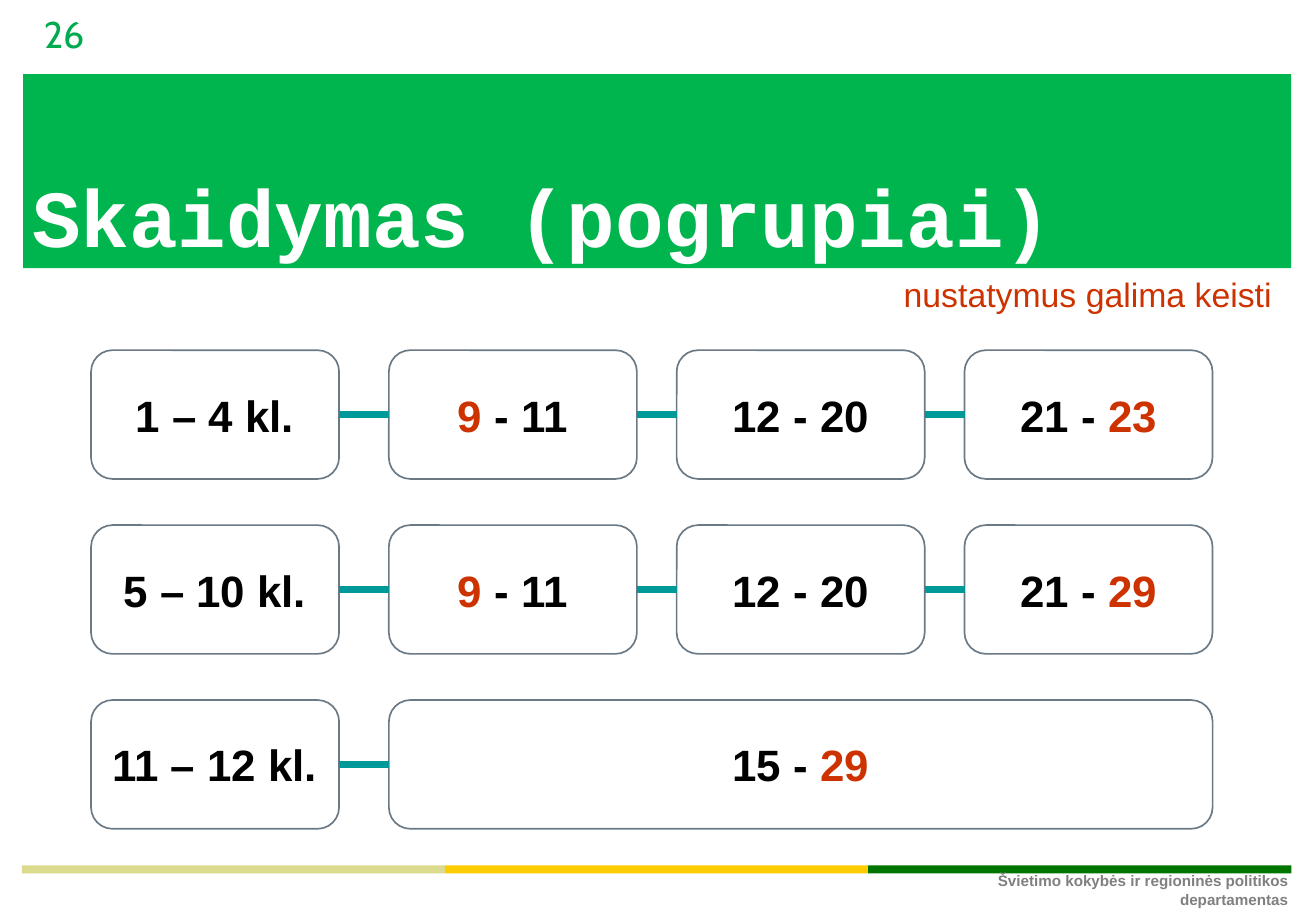
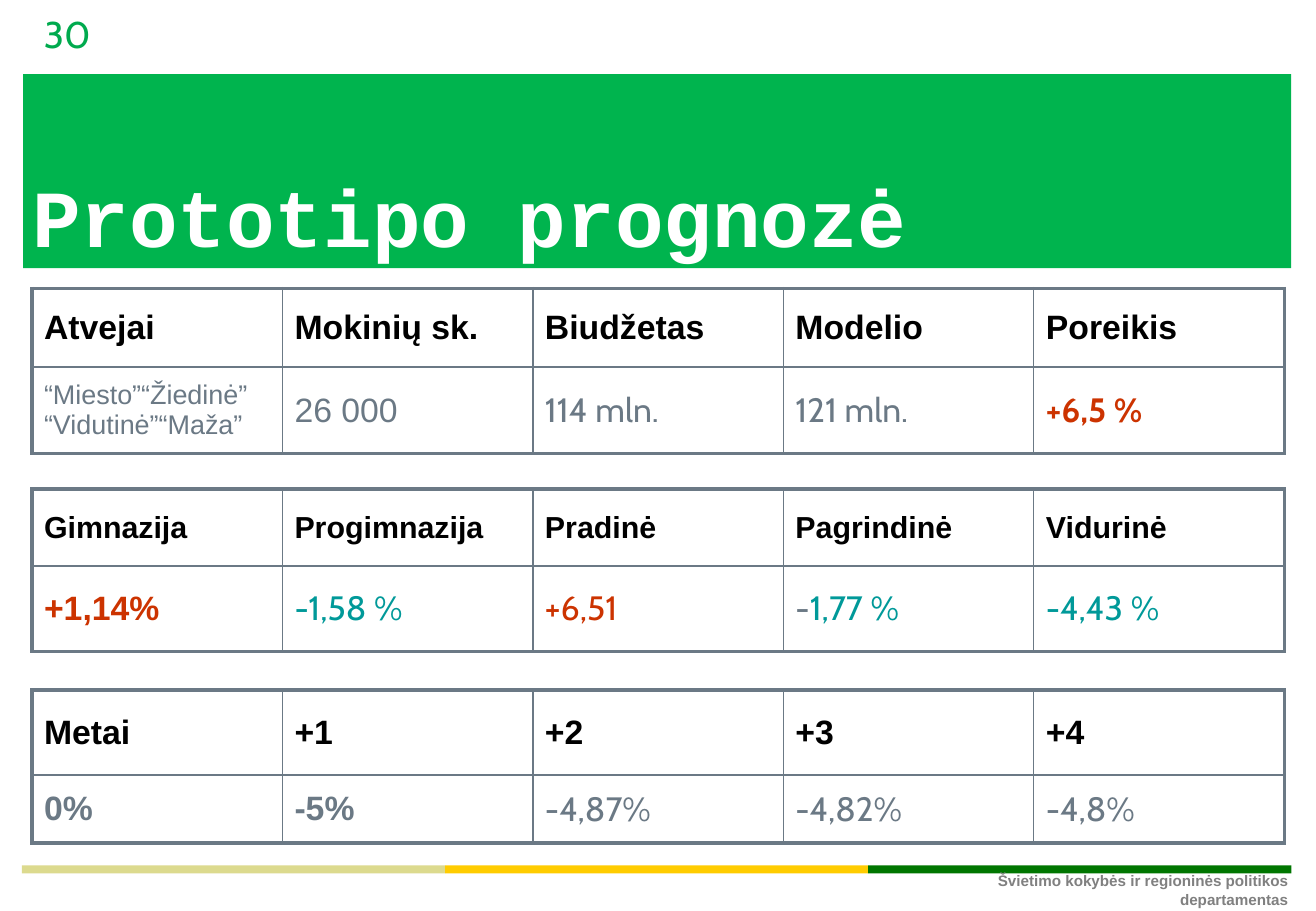
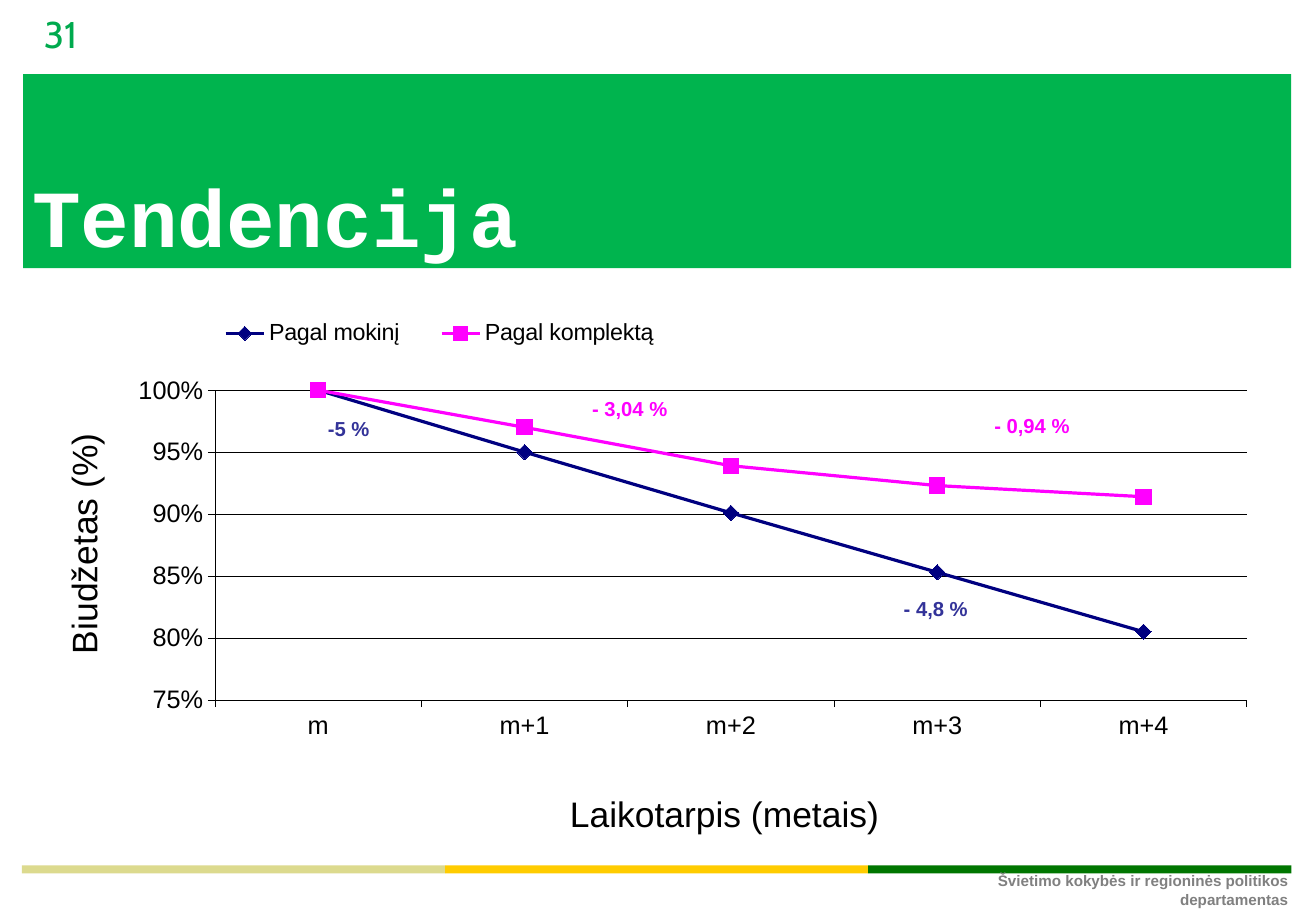
import pptx
import pptx.chart.data
import pptx.dml.color
import pptx.enum.chart
import pptx.enum.shapes
import pptx.enum.text
import pptx.oxml
import pptx.oxml.ns
import pptx.util

Pt = pptx.util.Pt
qn = pptx.oxml.ns.qn
ALIGN = pptx.enum.text.PP_ALIGN
ANCHOR = pptx.enum.text.MSO_ANCHOR
SHAPE = pptx.enum.shapes.MSO_SHAPE

COLORS = {
    "band": "00B44E", "number": "00AA4E", "sand": "DCDA8E", "gold": "FFCC00",
    "forest": "007600", "footer": "808080", "white": "FFFFFF", "black": "000000",
    "slate": "6B7985", "red": "CC3300", "teal": "009999", "navy": "000080",
    "indigo": "333399", "magenta": "FF00FF",
}
INSETS = (7.2, 3.6, 7.2, 3.6)


def rgb(name):
    return pptx.dml.color.RGBColor.from_string(COLORS[name])


def box(left, top, width, height):
    return Pt(left), Pt(top), Pt(width), Pt(height)


def set_font(font, size, color="black", name="Arial", bold=False):
    font.size = Pt(size)
    font.name = name
    font.bold = bold
    font.color.rgb = rgb(color)


def write(tf, text, size=20, color="black", name="Arial", bold=False,
          align=ALIGN.LEFT, anchor=ANCHOR.MIDDLE, insets=INSETS, wrap=True):
    tf.word_wrap = wrap
    tf.vertical_anchor = anchor
    tf.margin_left, tf.margin_top, tf.margin_right, tf.margin_bottom = map(Pt, insets)
    p = tf.paragraphs[0]
    p.alignment = align
    for part, part_color in [(text, color)] if isinstance(text, str) else text:
        r = p.add_run()
        r.text = part
        set_font(r.font, size, part_color, name, bold)


def add_text(s, place, text, **fmt):
    sp = s.shapes.add_textbox(*box(*place))
    write(sp.text_frame, text, **fmt)
    return sp


def add_bar(s, place, color):
    sp = s.shapes.add_shape(SHAPE.RECTANGLE, *box(*place))
    sp.shadow.inherit = False
    sp.fill.solid()
    sp.fill.fore_color.rgb = rgb(color)
    sp.line.fill.background()
    return sp


def build_layout(s):
    layout = s.slide_layout
    title = layout.placeholders[0]
    title.left, title.top, title.width, title.height = box(19, 46.6, 742, 109.5)
    shared = [add_bar(s, (13.7, 43.9, 751.7, 115), "band")]
    for i, color in enumerate(("sand", "gold", "forest")):
        shared.append(add_bar(s, (13 + 250.8 * i, 513, 250.8, 4.7), color))
    shared.append(add_text(
        s, (578, 513.6, 190.4, 26), "Švietimo kokybės ir regioninės politikos departamentas",
        size=9, color="footer", bold=True, align=ALIGN.RIGHT, anchor=ANCHOR.TOP,
        insets=(5, 3, 5, 3)))
    for i, sp in enumerate(shared):
        sp.element.nvSpPr.cNvPr.set("id", str(100 + i))
        layout.shapes.element.append(sp.element)


def start_slide(s, number, title):
    tf = s.shapes.title.text_frame
    write(tf, title, size=48, color="white", name="Courier New", bold=True,
          anchor=ANCHOR.BOTTOM, insets=(0, 0, 0, 0))
    tf.auto_size = pptx.enum.text.MSO_AUTO_SIZE.NONE
    add_text(s, (21, 8, 60, 24), number, size=22, color="number", name="Cabin",
             insets=(5, 3, 5, 3))


def add_card(s, place, text):
    sp = s.shapes.add_shape(SHAPE.ROUNDED_RECTANGLE, *box(*place))
    sp.shadow.inherit = False
    sp.fill.background()
    sp.line.color.rgb = rgb("slate")
    sp.line.width = Pt(1)
    write(sp.text_frame, text, size=26, bold=True, align=ALIGN.CENTER, wrap=False)


def add_link(s, start, end, y):
    cx = s.shapes.add_connector(pptx.enum.shapes.MSO_CONNECTOR.STRAIGHT,
                                Pt(start), Pt(y), Pt(end), Pt(y))
    cx.line.color.rgb = rgb("teal")
    cx.line.width = Pt(4)
    cx.element.spPr.append(pptx.oxml.parse_xml(
        f'<a:effectLst {pptx.oxml.ns.nsdecls("a")}/>'))


def add_card_rows(s, rows):
    width, height = 147, 76.3
    lefts = [54] + [230.5 + 170.6 * i for i in range(3)]
    for i, row in enumerate(rows):
        top = 207.6 + 103.7 * i
        for j, text in enumerate(row):
            right = lefts[-1 if j == len(row) - 1 else j] + width
            add_card(s, (lefts[j], top, right - lefts[j], height), text)
            if j:
                add_link(s, lefts[j - 1] + width, lefts[j], top + height / 2)


def set_borders(cell, widths):
    tcPr = cell._tc.get_or_add_tcPr()
    for i, (side, width) in enumerate(zip("LRTB", widths)):
        tcPr.insert(i, pptx.oxml.parse_xml(
            f'<a:ln{side} {pptx.oxml.ns.nsdecls("a")} w="{Pt(width)}"><a:solidFill>'
            f'<a:srgbClr val="{COLORS["slate"]}"/></a:solidFill></a:ln{side}>'))


def add_two_row_table(s, top, heights, headers, values, header_size=20):
    n = len(headers)
    table = s.shapes.add_table(2, n, *box(18.9, top, 742.3, sum(heights))).table
    table.first_row = table.horz_banding = False
    for row, height in zip(table.rows, heights):
        row.height = Pt(height)
    header_cells = [(text, dict(size=header_size, bold=True)) for text in headers]
    for i, row in enumerate((header_cells, values)):
        for j, (text, fmt) in enumerate(row):
            cell = table.cell(i, j)
            cell.fill.background()
            write(cell.text_frame, text, **fmt)
            cell.vertical_anchor = ANCHOR.MIDDLE
            cell.margin_left, cell.margin_top, cell.margin_right, cell.margin_bottom = map(Pt, INSETS)
            outer = (j == 0, j == n - 1, i == 0, i == 1)
            set_borders(cell, [2.25 if edge else 1 for edge in outer])


def place_part(element, after, **fractions):
    layout = element.find(qn("c:layout"))
    if layout is not None:
        element.remove(layout)
    inner = '<c:layoutTarget val="inner"/>' if after is None else ""
    modes = "".join(f'<c:{k}Mode val="edge"/>' for k in "xy")
    values = "".join(f'<c:{k} val="{v}"/>' for k, v in fractions.items())
    layout = pptx.oxml.parse_xml(
        f'<c:layout {pptx.oxml.ns.nsdecls("c")}><c:manualLayout>{inner}{modes}{values}'
        '</c:manualLayout></c:layout>')
    if after is None:
        element.insert(0, layout)
    else:
        element.find(qn(after)).addnext(layout)


def format_axis(axis, title, x, y):
    axis.major_tick_mark = pptx.enum.chart.XL_TICK_MARK.OUTSIDE
    axis.minor_tick_mark = pptx.enum.chart.XL_TICK_MARK.NONE
    axis.format.line.color.rgb = rgb("black")
    axis.format.line.width = Pt(0.5)
    set_font(axis.tick_labels.font, 15)
    r = axis.axis_title.text_frame.paragraphs[0].add_run()
    r.text = title
    set_font(r.font, 21)
    place_part(axis.axis_title.element, "c:tx", x=x, y=y)


def add_trend_chart(s, cats, series):
    data = pptx.chart.data.CategoryChartData(number_format="0%")
    data.categories = cats
    for name, values, color, marker in series:
        data.add_series(name, values)
    chart = s.shapes.add_chart(pptx.enum.chart.XL_CHART_TYPE.LINE_MARKERS,
                               *box(18, 165.6, 735, 337), data).chart
    set_font(chart.font, 15)
    chart.has_title = False
    chart.plots[0].vary_by_categories = False

    for line, (name, values, color, marker) in zip(chart.series, series):
        line.smooth = False
        line.format.line.color.rgb = rgb(color)
        line.format.line.width = Pt(1.9)
        line.marker.style = marker
        line.marker.size = 9
        line.marker.format.fill.solid()
        line.marker.format.fill.fore_color.rgb = rgb(color)
        line.marker.format.line.color.rgb = rgb(color)

    format_axis(chart.category_axis, "Laikotarpis (metais)", 0.43, 0.89)
    axis = chart.value_axis
    format_axis(axis, "Biudžetas (%)", 0.02, 0.26)
    axis.minimum_scale, axis.maximum_scale, axis.major_unit = 0.75, 1, 0.05
    axis.tick_labels.number_format = "0%"
    axis.tick_labels.number_format_is_linked = False
    axis.has_major_gridlines = True
    axis.major_gridlines.format.line.color.rgb = rgb("black")
    axis.major_gridlines.format.line.width = Pt(0.5)

    chart.has_legend = True
    chart.legend.position = pptx.enum.chart.XL_LEGEND_POSITION.TOP
    chart.legend.include_in_layout = False
    set_font(chart.legend.font, 13.8)
    place_part(next(chart.element.iter(qn("c:legend"))), "c:legendPos",
               x=0.13, y=0.06, w=0.4, h=0.07)
    place_part(next(chart.element.iter(qn("c:plotArea"))), None,
               x=0.149, y=0.195, w=0.832, h=0.545)


def fill_groups(s):
    start_slide(s, "26", "Skaidymas (pogrupiai)")
    low = [("9", "red"), (" - 11", "black")]
    add_card_rows(s, [
        ["1 – 4 kl.", low, "12 - 20", [("21 - ", "black"), ("23", "red")]],
        ["5 – 10 kl.", low, "12 - 20", [("21 - ", "black"), ("29", "red")]],
        ["11 – 12 kl.", [("15 - ", "black"), ("29", "red")]],
    ])
    add_text(s, (526.3, 158.4, 234.7, 31.7), "nustatymus galima keisti",
             color="red", align=ALIGN.RIGHT)


def fill_forecast(s):
    start_slide(s, "30", "Prototipo prognozė")
    plain = dict(color="slate", name="Cabin")
    strong = dict(color="slate", bold=True)
    saving = dict(color="teal", name="Cabin")
    add_two_row_table(
        s, 171, (46.5, 51.5),
        ["Atvejai", "Mokinių sk.", "Biudžetas", "Modelio", "Poreikis"],
        [("“Miesto”“Žiedinė” “Vidutinė”“Maža”", dict(size=16, color="slate")),
         ("26 000", dict(color="slate")), ("114 mln.", plain), ("121 mln.", plain),
         ("+6,5 %", dict(color="red", name="Cabin", bold=True))])
    add_two_row_table(
        s, 289.8, (45.8, 50.5),
        ["Gimnazija", "Progimnazija", "Pradinė", "Pagrindinė", "Vidurinė"],
        [("+1,14%", dict(color="red", bold=True)), ("-1,58 %", saving),
         ("+6,51", dict(color="red", name="Cabin")),
         ([("-", "slate"), ("1,77 %", "teal")], plain), ("-4,43 %", saving)],
        header_size=18)
    add_two_row_table(
        s, 409, (50.5, 40.3),
        ["Metai", "+1", "+2", "+3", "+4"],
        [("0%", strong), ("-5%", strong), ("-4,87%", plain), ("-4,82%", plain),
         ("-4,8%", plain)])


def fill_trend(s):
    start_slide(s, "31", "Tendencija")
    marker = pptx.enum.chart.XL_MARKER_STYLE
    add_trend_chart(s, ["m", "m+1", "m+2", "m+3", "m+4"], [
        ("Pagal mokinį", (1, 0.95, 0.901, 0.853, 0.805), "navy", marker.DIAMOND),
        ("Pagal komplektą", (1, 0.97, 0.939, 0.923, 0.914), "magenta", marker.SQUARE),
    ])
    for left, top, width, text, color in (
            (180.7, 243.4, 52, "-5 %", "indigo"),
            (327.6, 231.1, 91.4, "- 3,04 %", "magenta"),
            (509, 350, 91.4, "- 4,8 %", "indigo"),
            (566, 241.2, 91.4, "- 0,94 %", "magenta")):
        add_text(s, (left, top, width, 21.6), text, size=12, color=color, bold=True,
                 align=ALIGN.CENTER, anchor=ANCHOR.TOP)


def main():
    prs = pptx.Presentation()
    prs.slide_width, prs.slide_height = Pt(780), Pt(540)
    fills = (fill_groups, fill_forecast, fill_trend)
    slides = [prs.slides.add_slide(prs.slide_layouts[5]) for fill in fills]
    build_layout(slides[0])
    for s, fill in zip(slides, fills):
        fill(s)
    prs.save("out.pptx")


if __name__ == "__main__":
    main()
